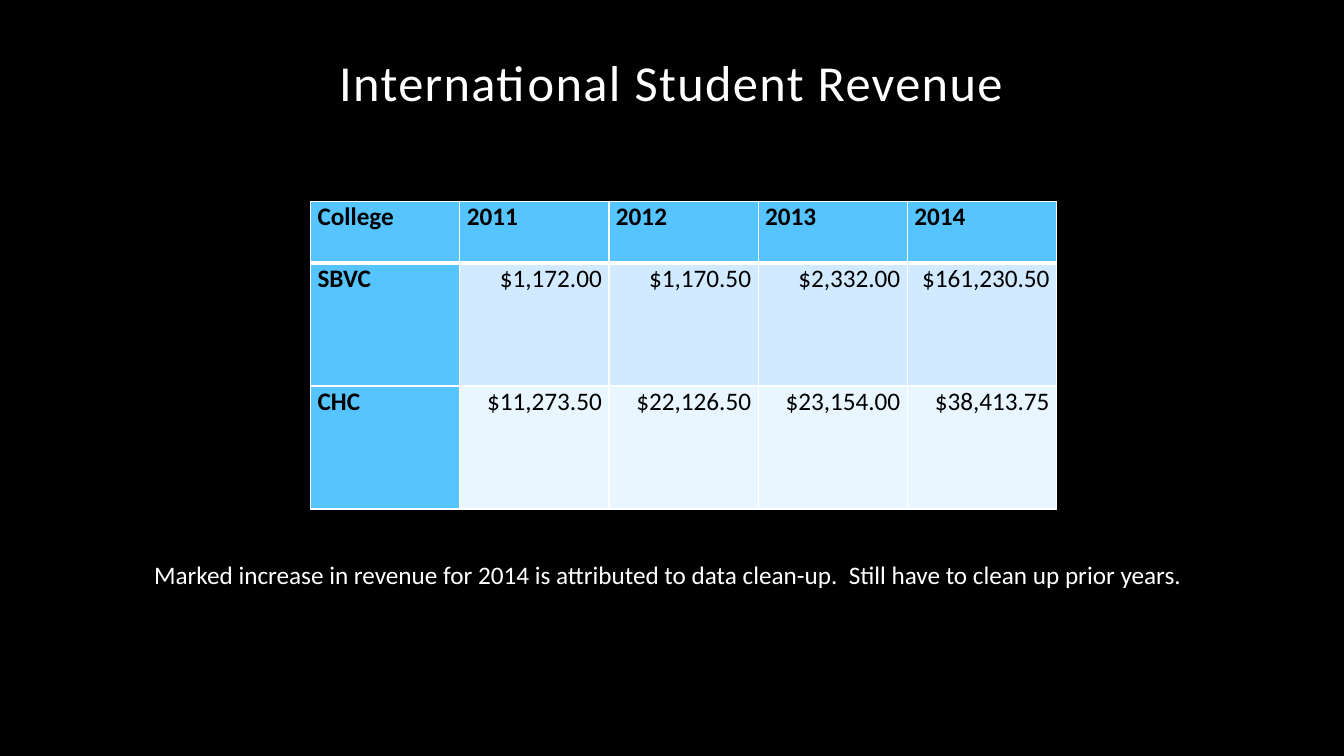
from lxml import etree
from pptx import Presentation
from pptx.dml.color import RGBColor
from pptx.enum.text import MSO_ANCHOR, MSO_AUTO_SIZE, PP_ALIGN
from pptx.oxml.ns import qn
from pptx.util import Inches, Pt

LEFT, CENTER, RIGHT = PP_ALIGN.LEFT, PP_ALIGN.CENTER, PP_ALIGN.RIGHT
BOTTOM = MSO_ANCHOR.BOTTOM
GROW = MSO_AUTO_SIZE.SHAPE_TO_FIT_TEXT
NO_FIT = MSO_AUTO_SIZE.NONE

COLORS = {
    "background": "000000",
    "light": "FFFFFF",
    "dark": "000000",
    "heading": "56C5FF",
    "band1": "D1EAFF",
    "band2": "E9F5FF",
}
REVENUE = [
    ["College", "2011", "2012", "2013", "2014"],
    ["SBVC", "$1,172.00", "$1,170.50", "$2,332.00", "$161,230.50"],
    ["CHC", "$11,273.50", "$22,126.50", "$23,154.00", "$38,413.75"],
]
COL_WIDTH = 1.48
ROW_HEIGHTS = [0.61, 1.22, 1.22]
CELL_MARGINS = {
    "margin_left": Inches(0.07),
    "margin_right": Inches(0.07),
    "margin_top": 0,
    "margin_bottom": 0,
}


def rgb(name):
    return RGBColor.from_string(COLORS[name])


def set_attrs(target, values):
    for name, value in values.items():
        setattr(target, name, value)


def write(tf, text, size, color, bold=False, align=LEFT):
    """Fill a text frame with one formatted run and return the run."""
    p = tf.paragraphs[0]
    p.alignment = align
    r = p.add_run()
    r.text = text
    set_attrs(r.font, {"name": "Calibri", "size": Pt(size), "bold": bold})
    r.font.color.rgb = rgb(color)
    return r


def set_borders(cell, widths):
    """Draw white cell borders; widths maps L, R, T, B to points."""
    tc_pr = cell._tc.get_or_add_tcPr()
    for i, (side, width) in enumerate(widths.items()):
        ln = etree.Element(qn(f"a:ln{side}"), w=str(Pt(width)))
        fill = etree.SubElement(ln, qn("a:solidFill"))
        etree.SubElement(fill, qn("a:srgbClr"), val=COLORS["light"])
        tc_pr.insert(i, ln)


def add_title(slide, text):
    sp = slide.shapes.title
    set_attrs(sp, {"left": Inches(1.66), "top": Inches(0.42),
                   "width": Inches(10), "height": Inches(0.75)})
    tf = sp.text_frame
    set_attrs(tf, {"vertical_anchor": BOTTOM, "auto_size": NO_FIT})
    r = write(tf, text, 36, "light", align=CENTER)
    tf.paragraphs[0].line_spacing = 0.9
    r.font._element.set("spc", "100")


def add_revenue_table(slide):
    n_rows, n_cols = len(REVENUE), len(REVENUE[0])
    table = slide.shapes.add_table(
        n_rows, n_cols, Inches(3.08), Inches(2),
        Inches(COL_WIDTH * n_cols), Inches(sum(ROW_HEIGHTS))).table
    for col in table.columns:
        col.width = Inches(COL_WIDTH)
    for i, (row, height) in enumerate(zip(REVENUE, ROW_HEIGHTS)):
        table.rows[i].height = Inches(height)
        for j, text in enumerate(row):
            heading = i == 0 or j == 0
            cell = table.cell(i, j)
            set_attrs(cell, CELL_MARGINS)
            cell.fill.solid()
            cell.fill.fore_color.rgb = rgb("heading" if heading else f"band{i}")
            set_borders(cell, {"L": 1, "R": 1, "T": 3 if i == 1 else 1,
                               "B": 3 if i == 0 else 1})
            write(cell.text_frame, text, 18, "dark", heading,
                  LEFT if heading else RIGHT)


def add_note(slide, text):
    sp = slide.shapes.add_textbox(Inches(1.43), Inches(5.5),
                                  Inches(10.48), Inches(0.4))
    set_attrs(sp.text_frame, {"word_wrap": False, "auto_size": GROW})
    write(sp.text_frame, text, 18, "light")


def main():
    prs = Presentation()
    set_attrs(prs, {"slide_width": Inches(13.33), "slide_height": Inches(7.5)})
    slide = prs.slides.add_slide(prs.slide_layouts.get_by_name("Title Only"))
    slide.background.fill.solid()
    slide.background.fill.fore_color.rgb = rgb("background")
    add_title(slide, "International Student Revenue")
    add_revenue_table(slide)
    add_note(slide, "Marked increase in revenue for 2014 is attributed to data "
                    "clean-up.  Still have to clean up prior years.")
    prs.save("out.pptx")


if __name__ == "__main__":
    main()
